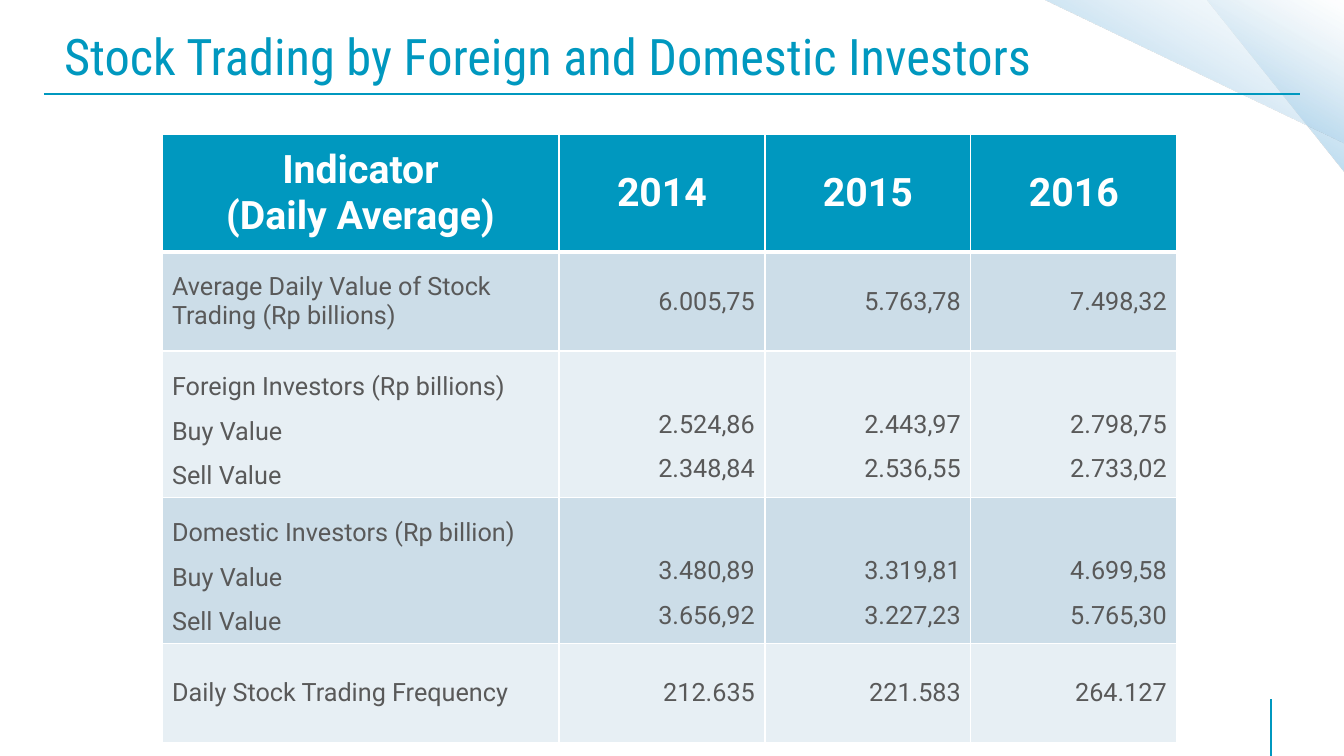
from lxml.etree import SubElement
from pptx import Presentation
from pptx.dml.color import RGBColor
from pptx.enum.shapes import MSO_CONNECTOR, MSO_SHAPE
from pptx.enum.text import MSO_ANCHOR, PP_ALIGN
from pptx.oxml import parse_xml
from pptx.oxml.ns import nsdecls, qn
from pptx.util import Emu, Pt

TEAL, WHITE, GREY = "0098BF", "FFFFFF", "595959"
BANDS = ["CCDDE8", "E7EFF4"]
GRADIENT = [(0, "8FC8E8", 100), (50, "A4CEE9", 44), (100, "DEEDF6", 0)]

HEADER = [["Indicator", "(Daily Average)"], ["2014"], ["2015"], ["2016"]]
ROWS = [
    [["Average Daily Value of Stock Trading (Rp billions)"],
     ["6.005,75"], ["5.763,78"], ["7.498,32"]],
    [["Foreign Investors (Rp billions)", "Buy Value", "Sell Value"],
     ["2.524,86", "2.348,84"], ["2.443,97", "2.536,55"], ["2.798,75", "2.733,02"]],
    [["Domestic Investors (Rp billion)", "Buy Value", "Sell Value"],
     ["3.480,89", "3.656,92"], ["3.319,81", "3.227,23"], ["4.699,58", "5.765,30"]],
    [["Daily Stock Trading Frequency"], ["212.635"], ["221.583"], ["264.127"]],
]
COL_WIDTHS = [397, 206, 206, 206]
ROW_HEIGHTS = [118, 99, 143, 143, 99]


def px(n):
    return Emu(round(n * 914400 / 100.8))


def color(value):
    return RGBColor.from_string(value)


def set_attrs(target, values):
    for name, value in values.items():
        setattr(target, name, value)


def write(tf, lines, font, ink, para=None):
    for i, line in enumerate(lines):
        p = tf.paragraphs[0] if i == 0 else tf.add_paragraph()
        set_attrs(p, para or {})
        r = p.add_run()
        r.text = line
        set_attrs(r.font, font)
        r.font.color.rgb = color(ink)


def add_line(s, x1, y1, x2, y2):
    line = s.shapes.add_connector(MSO_CONNECTOR.STRAIGHT, px(x1), px(y1), px(x2), px(y2))
    line.line.width = Pt(1)
    line.line.color.rgb = color(TEAL)
    SubElement(line._element.spPr, qn("a:effectLst"))


def add_corner(s, x, y, w, h):
    """Translucent triangle with its right angle at the top right."""
    sp = s.shapes.add_shape(MSO_SHAPE.RIGHT_TRIANGLE, px(x), px(y), px(w), px(h))
    sp.rotation = 180
    sp.shadow.inherit = False
    sp.line.fill.background()
    sp.fill.background()
    stops = "".join(
        f'<a:gs pos="{pos * 1000}"><a:srgbClr val="{hue}">'
        f'<a:alpha val="{alpha * 1000}"/></a:srgbClr></a:gs>'
        for pos, hue, alpha in GRADIENT)
    grad = parse_xml(
        f'<a:gradFill {nsdecls("a")} rotWithShape="1"><a:gsLst>{stops}</a:gsLst>'
        f'<a:lin ang="{120 * 60000}" scaled="0"/></a:gradFill>')
    props = sp._element.spPr
    props.replace(props.find(qn("a:noFill")), grad)


def add_backdrop(s, w, h):
    add_corner(s, w - 137, 0, 137, 172)
    add_corner(s, w - 300, 0, 301, 143)
    add_line(s, 44, 94, w - 44, 94)
    add_line(s, w - 73, h, w - 73, h - 57)


def add_title(s, x, y, w, h, text):
    tf = s.shapes.add_textbox(px(x), px(y), px(w), px(h)).text_frame
    set_attrs(tf, {"word_wrap": True, "vertical_anchor": MSO_ANCHOR.MIDDLE,
                   "margin_left": px(18), "margin_right": px(18),
                   "margin_top": px(9), "margin_bottom": px(9)})
    write(tf, [text], {"name": "Roboto Condensed", "size": Pt(36)}, TEAL)


def style_cell(cell, fill, bottom):
    cell.vertical_anchor = MSO_ANCHOR.MIDDLE
    cell.fill.solid()
    cell.fill.fore_color.rgb = color(fill)
    widths = {"lnL": 1, "lnR": 1, "lnT": 1, "lnB": bottom}
    for i, (side, width) in enumerate(widths.items()):
        cell._tc.get_or_add_tcPr().insert(i, parse_xml(
            f'<a:{side} {nsdecls("a")} w="{Pt(width)}"><a:solidFill>'
            f'<a:srgbClr val="{WHITE}"/></a:solidFill></a:{side}>'))


def add_trading_table(s, x, y):
    table = s.shapes.add_table(
        len(ROWS) + 1, len(HEADER), px(x), px(y),
        px(sum(COL_WIDTHS)), px(sum(ROW_HEIGHTS))).table
    for column, width in zip(table.columns, COL_WIDTHS):
        column.width = px(width)
    for row, height in zip(table.rows, ROW_HEIGHTS):
        row.height = px(height)

    # Header
    for cell, lines in zip(table.rows[0].cells, HEADER):
        style_cell(cell, TEAL, 3)
        write(cell.text_frame, lines, {"name": "Roboto", "size": Pt(28), "bold": True},
              WHITE, {"alignment": PP_ALIGN.CENTER})

    # Indicators: labels left, figures right
    for i, row in enumerate(ROWS):
        grouped = len(row[0]) > 1
        for j, lines in enumerate(row):
            cell = table.cell(i + 1, j)
            style_cell(cell, BANDS[i % 2], 1)
            para = {"alignment": PP_ALIGN.RIGHT if j else PP_ALIGN.LEFT}
            if grouped:
                para["line_spacing"] = 1.5
            if grouped and j:
                set_attrs(cell, {"vertical_anchor": MSO_ANCHOR.BOTTOM,
                                 "margin_bottom": px(13)})
            write(cell.text_frame, lines,
                  {"name": "Roboto", "size": Pt(18), "bold": False}, GREY, para)


def main():
    prs = Presentation()
    set_attrs(prs, {"slide_width": px(1344), "slide_height": px(756)})
    s = prs.slides.add_slide(prs.slide_layouts[6])
    add_backdrop(s, 1344, 756)
    add_title(s, 46, 14, 1231, 83, "Stock Trading by Foreign and Domestic Investors")
    add_trading_table(s, 162, 134)
    prs.save("out.pptx")


if __name__ == "__main__":
    main()
